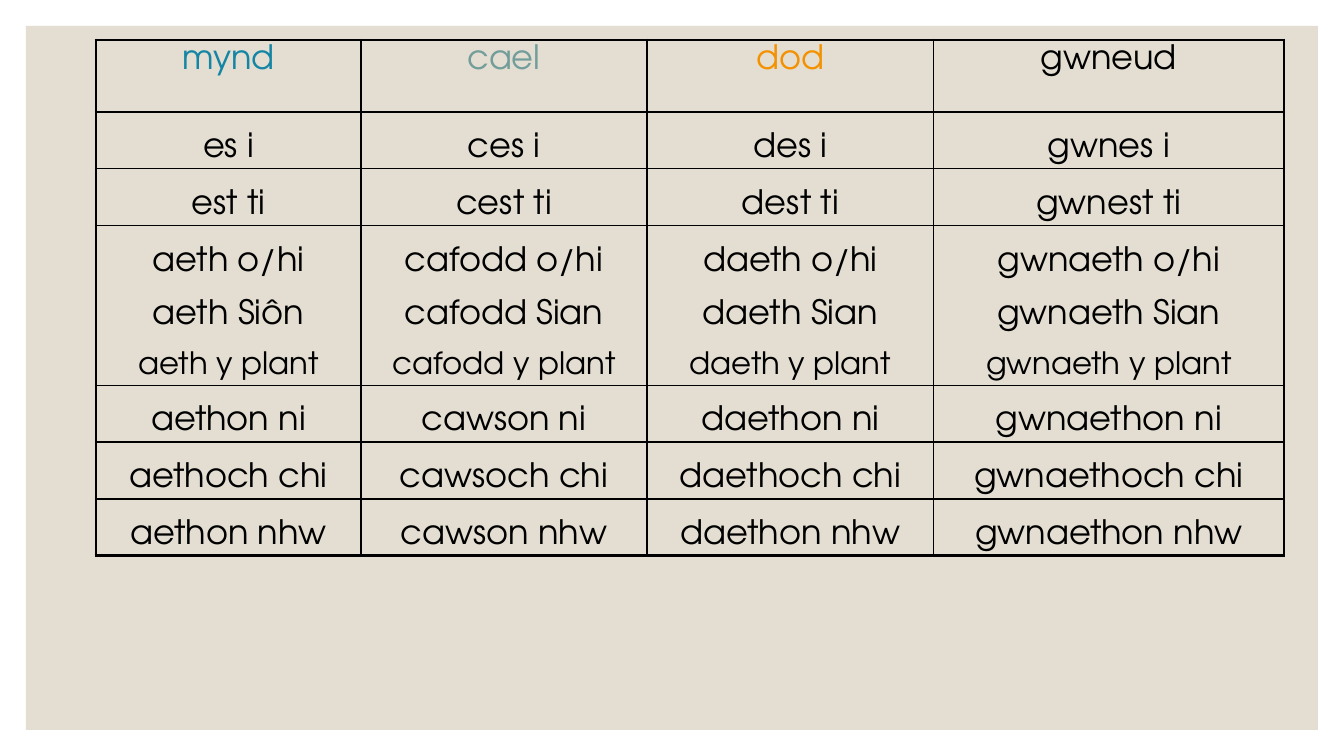
from lxml import etree
from pptx import Presentation
from pptx.dml.color import RGBColor
from pptx.enum.shapes import MSO_SHAPE
from pptx.enum.text import PP_ALIGN
from pptx.oxml.ns import qn
from pptx.util import Pt

PX = 914400 / 100.8
RECTANGLE = MSO_SHAPE.RECTANGLE
CENTER = PP_ALIGN.CENTER
FONT = "TeX Gyre Adventor"
THIN, THICK = 1, 2.25
CELL_MARGIN = 5
COLORS = {"panel": "E3DED1", "ink": "000000", "mynd": "1485A4",
          "cael": "739D9B", "dod": "F49100", "gwneud": "000000"}

COLUMN_WIDTHS = [265, 286, 287, 350]
ROW_HEIGHTS = [72, 39, 45, 146, 47, 53, 47]
# One verb per column; a list holds the lines of one cell
VERBS = [
    ["mynd", "es i", "est ti", ["aeth o/hi", "aeth Siôn", "aeth y plant"],
     "aethon ni", "aethoch chi", "aethon nhw"],
    ["cael", "ces i", "cest ti", ["cafodd o/hi", "cafodd Sian", "cafodd y plant"],
     "cawson ni", "cawsoch chi", "cawson nhw"],
    ["dod", "des i", "dest ti", ["daeth o/hi", "daeth Sian", "daeth y plant"],
     "daethon ni", "daethoch chi", "daethon nhw"],
    ["gwneud", "gwnes i", "gwnest ti",
     ["gwnaeth o/hi", "gwnaeth Sian", "gwnaeth y plant"],
     "gwnaethon ni", "gwnaethoch chi", "gwnaethon nhw"],
]


def px(length):
    return round(length * PX)


def rgb(name):
    return RGBColor.from_string(COLORS[name])


def add_panel(page, left, top, width, height):
    panel = page.shapes.add_shape(RECTANGLE, px(left), px(top), px(width), px(height))
    panel.shadow.inherit = False
    panel.fill.solid()
    panel.fill.fore_color.rgb = rgb("panel")
    panel.line.fill.background()


def set_borders(cell, widths):
    properties = cell._tc.get_or_add_tcPr()
    for side, width in widths.items():
        line = etree.SubElement(properties, qn(f"a:ln{side}"), w=str(Pt(width)))
        fill = etree.SubElement(line, qn("a:solidFill"))
        etree.SubElement(fill, qn("a:srgbClr"), val=COLORS["ink"])


def space_before(para, percent):
    spacing = etree.Element(qn("a:spcBef"))
    etree.SubElement(spacing, qn("a:spcPct"), val=str(percent * 1000))
    properties = para._p.get_or_add_pPr()
    line_spacing = properties.find(qn("a:lnSpc"))
    properties.insert(0 if line_spacing is None else 1, spacing)


def fill_cell(cell, lines, color, line_spacing):
    cell.margin_top = cell.margin_bottom = px(CELL_MARGIN)
    cell.text = "\n".join(lines)
    for index, para in enumerate(cell.text_frame.paragraphs):
        para.alignment = CENTER
        if line_spacing:
            para.line_spacing = line_spacing
        space_before(para, 20)
        para.font.name = FONT
        para.font.size = Pt(22 if index == 2 else 24)
        para.font.bold = False
        para.font.color.rgb = rgb(color)


def add_verb_table(page, left, top):
    last_row, last_column = len(ROW_HEIGHTS) - 1, len(VERBS) - 1
    frame = page.shapes.add_table(
        len(ROW_HEIGHTS), len(VERBS), px(left), px(top),
        px(sum(COLUMN_WIDTHS)), px(sum(ROW_HEIGHTS)))
    table = frame.table
    table.first_row = False
    table.horz_banding = False
    for row, height in zip(table.rows, ROW_HEIGHTS):
        row.height = px(height)
    for c, (verb, width) in enumerate(zip(VERBS, COLUMN_WIDTHS)):
        table.columns[c].width = px(width)
        for r, entry in enumerate(verb):
            cell = table.cell(r, c)
            lines = entry if isinstance(entry, list) else [entry]
            heading = r == 0
            fill_cell(cell, lines, verb[0] if heading else "ink",
                      None if heading else 1.5)
            # Thick lines run round the outside only
            set_borders(cell, {"L": THICK if c == 0 else THIN,
                               "R": THICK if c == last_column else THIN,
                               "T": THICK if heading else THIN,
                               "B": THICK if r == last_row else THIN})
            cell.fill.background()


def main():
    deck = Presentation()
    deck.slide_width, deck.slide_height = px(1344), px(756)
    page = deck.slides.add_slide(deck.slide_layouts[6])
    # Background panel
    add_panel(page, 26, 26, 1292, 704)
    # Past tense of the four irregular verbs
    add_verb_table(page, 96, 40)
    deck.save("out.pptx")


if __name__ == "__main__":
    main()
